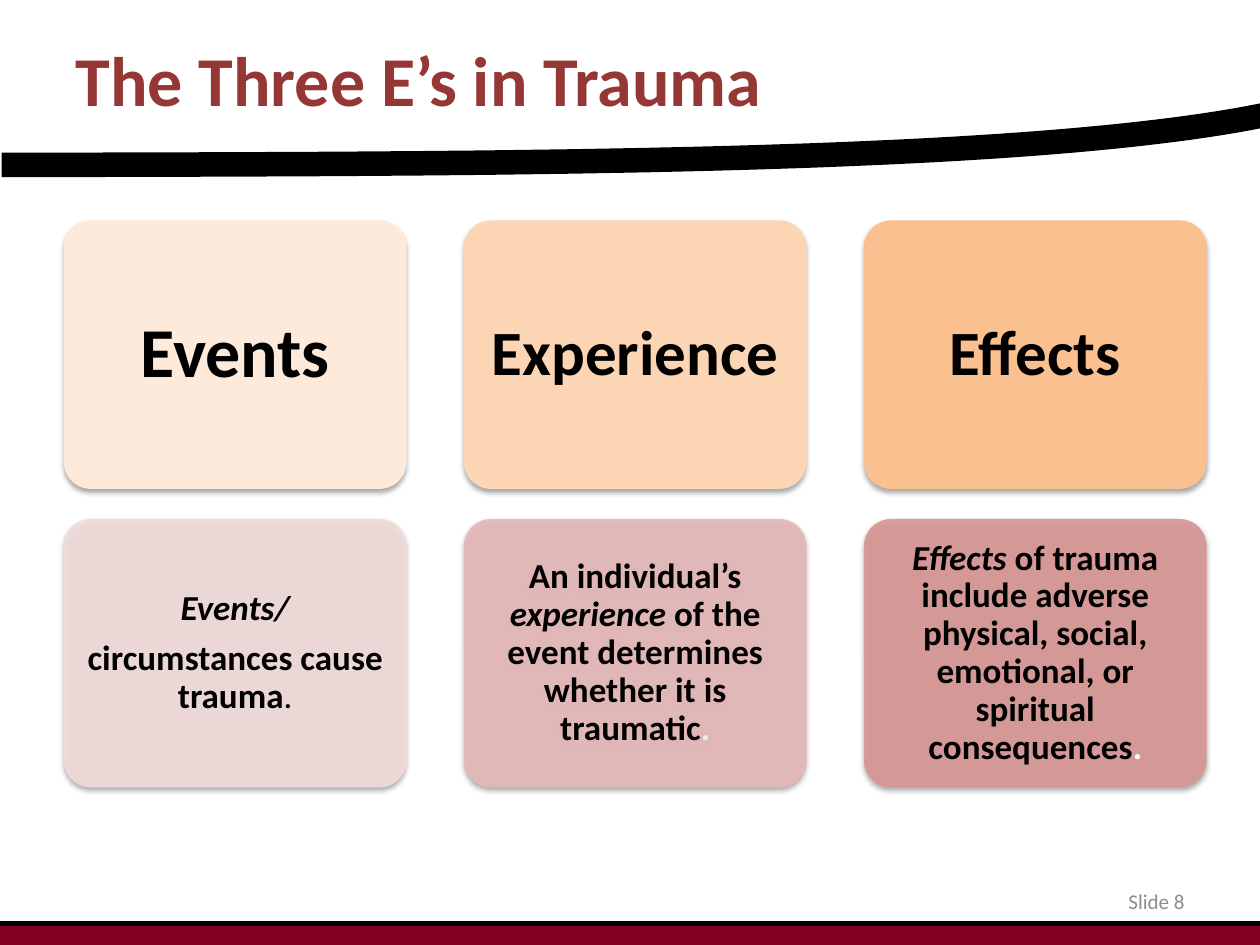
"""Build the slide on the three E's in trauma."""
import lxml.etree
import pptx
import pptx.dml.color
import pptx.enum.shapes
import pptx.enum.text
import pptx.oxml
import pptx.oxml.ns
import pptx.util

Pt = pptx.util.Pt
ALIGN = pptx.enum.text.PP_ALIGN
COLORS = {
    "black": "000000", "white": "FFFFFF", "cream": "EEECE1", "title": "953735",
    "grey": "8C8C8C", "maroon": "820024",
    "peach1": "FDEADA", "peach2": "FCD5B5", "peach3": "FAC090",
    "rose1": "F2DCDB", "rose2": "E6B9B8", "rose3": "D99694",
}
SHADOW = (
    '<a:effectLst xmlns:a="http://schemas.openxmlformats.org/drawingml/2006/main">'
    '<a:outerShdw blurRad="%d" dist="%d" dir="5400000" rotWithShape="0">'
    '<a:srgbClr val="%s"><a:alpha val="35000"/></a:srgbClr>'
    '</a:outerShdw></a:effectLst>' % (Pt(3.1), Pt(1.8), COLORS["black"])
)


class SlideBuilder:
    """Hold the style and the current slide."""

    font = "Calibri"

    def __init__(self, prs):
        self.slide = prs.slides.add_slide(prs.slide_layouts[5])
        self.shapes = self.slide.shapes

    def color(self, name):
        return pptx.dml.color.RGBColor.from_string(COLORS[name])

    def paint(self, sp, fill):
        sp.shadow.inherit = False
        sp.fill.solid()
        sp.fill.fore_color.rgb = self.color(fill)

    def format_run(self, r, size, color, bold=False, italic=False):
        r.font.name, r.font.size = self.font, Pt(size)
        r.font.bold, r.font.italic = bold, italic
        r.font.color.rgb = self.color(color)

    def frame(self, sp, inset=None):
        tf = sp.text_frame
        tf.word_wrap = True
        tf.auto_size = pptx.enum.text.MSO_AUTO_SIZE.NONE
        tf.vertical_anchor = pptx.enum.text.MSO_ANCHOR.MIDDLE
        if inset is not None:
            tf.margin_left = tf.margin_right = Pt(inset)
            tf.margin_top = tf.margin_bottom = Pt(inset)
        return tf

    def line_of_text(self, sp, text, size, color, align, bold=False):
        tf = self.frame(sp)
        tf.text = text
        p = tf.paragraphs[0]
        p.alignment = align
        self.format_run(p.runs[0], size, color, bold)

    def title(self, text, x, y, w, h):
        sp = self.shapes.title
        sp.left, sp.top, sp.width, sp.height = Pt(x), Pt(y), Pt(w), Pt(h)
        self.line_of_text(sp, text, 40, "title", ALIGN.LEFT, bold=True)

    def label(self, text, x, y, w, h):
        sp = self.shapes.add_textbox(Pt(x), Pt(y), Pt(w), Pt(h))
        self.line_of_text(sp, text, 12, "grey", ALIGN.RIGHT)

    def card(self, x, y, w, h, fill, size, inset, paragraphs, alpha=None):
        sp = self.shapes.add_shape(
            pptx.enum.shapes.MSO_SHAPE.ROUNDED_RECTANGLE, Pt(x), Pt(y), Pt(w), Pt(h))
        sp.adjustments[0] = 0.1
        self.paint(sp, fill)
        sp.line.fill.background()
        props = sp._element.spPr
        props.replace(props.find(pptx.oxml.ns.qn("a:effectLst")), pptx.oxml.parse_xml(SHADOW))
        if alpha:
            tint = props.find(pptx.oxml.ns.qn("a:solidFill"))[0]
            lxml.etree.SubElement(tint, pptx.oxml.ns.qn("a:alpha")).set("val", str(alpha * 1000))
        tf = self.frame(sp, inset)
        for i, runs in enumerate(paragraphs):
            p = tf.add_paragraph() if i else tf.paragraphs[0]
            p.alignment, p.line_spacing = ALIGN.CENTER, 0.9
            p.space_after = Pt(0.35 * size)
            for text, style in runs:
                r = p.add_run()
                r.text = text
                self.format_run(r, size, **{"color": "black", "bold": True, **style})

    def bar(self, x, y, w, h, fill):
        sp = self.shapes.add_shape(
            pptx.enum.shapes.MSO_SHAPE.RECTANGLE, Pt(x), Pt(y), Pt(w), Pt(h))
        self.paint(sp, fill)
        sp.line.fill.background()

    def rule(self, x1, y1, x2, y2, width):
        cxn = self.shapes.add_connector(
            pptx.enum.shapes.MSO_CONNECTOR.STRAIGHT, Pt(x1), Pt(y1), Pt(x2), Pt(y2))
        cxn.line.width = Pt(width)
        cxn.line.color.rgb = self.color("black")
        lxml.etree.SubElement(cxn._element.spPr, pptx.oxml.ns.qn("a:effectLst"))

    def swoosh(self, controls, width, steps=60):
        points = []
        for i in range(steps + 1):
            t = i / steps
            weights = ((1 - t) ** 3, 3 * t * (1 - t) ** 2, 3 * t * t * (1 - t), t ** 3)
            points.append([Pt(sum(k * c for k, c in zip(weights, axis)))
                           for axis in zip(*controls)])
        builder = self.shapes.build_freeform(*points[0])
        builder.add_line_segments(points[1:], close=False)
        sp = builder.convert_to_shape()
        self.paint(sp, "white")
        sp.line.width = Pt(width)
        sp.line.color.rgb = self.color("black")


ITALIC = {"italic": True}
CARDS = [
    ("Events", 40, "peach1", "rose1",
     [[("Events/", ITALIC)],
      [("circumstances cause trauma", {}), (".", {"bold": False})]]),
    ("Experience", 36, "peach2", "rose2",
     [[("An individual’s ", {}), ("experience", ITALIC),
       (" of the event determines whether it is traumatic", {}),
       (".", {"color": "cream"})]]),
    ("Effects", 36, "peach3", "rose3",
     [[("Effects ", ITALIC),
       ("of trauma include adverse physical, social, emotional, or spiritual consequences", {}),
       (".", {"color": "white"})]]),
]


def main():
    prs = pptx.Presentation()
    prs.slide_width, prs.slide_height = Pt(720), Pt(540)
    s = SlideBuilder(prs)
    s.bar(0, 527.8, 720, 12.2, "maroon")
    s.rule(0, 527.8, 720, 527.8, 3)
    s.swoosh([(0.9, 94.3), (306, 93.7), (610.6, 93.6), (739.4, 62)], 14)
    s.title("The Three E’s in Trauma", 36, 0, 648, 90)
    left, top, width, height = 36.5, 126, 195.8, 153.4
    step_x, step_y = 228.6, 170.6
    for i, (name, size, head_fill, body_fill, body) in enumerate(CARDS):
        x = left + i * step_x
        s.card(x, top, width, height, head_fill, size, 10, [[(name, {})]])
        s.card(x, top + step_y, width, height, body_fill, 20, 5.6, body, alpha=90)
    s.label("Slide 8", 516, 500.6, 168, 28.8)
    prs.save("out.pptx")


if __name__ == "__main__":
    main()
